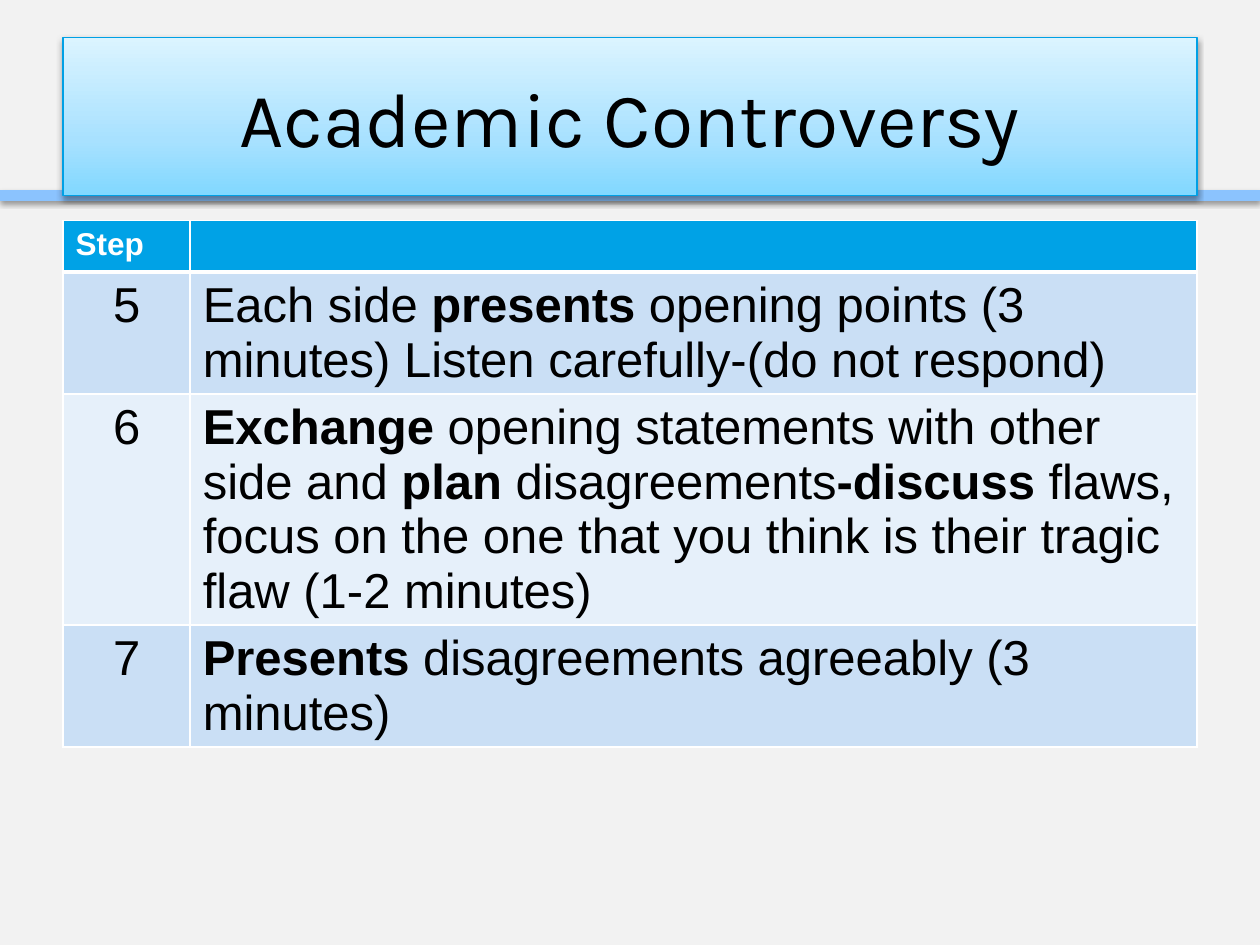
import pptx
import pptx.util
import pptx.dml.color
import pptx.enum.text
import pptx.enum.shapes
import pptx.oxml.ns
import lxml.etree

TITLE = "Academic Controversy"
HEADER = ["Step", ""]
STEPS = [
    ("5", [("Each side ", False), ("presents", True),
           (" opening points (3 minutes) Listen carefully-(do not respond)", False)]),
    ("6", [("Exchange", True), (" opening statements with other side and ", False),
           ("plan ", True), ("disagreements", False), ("-discuss", True),
           (" flaws, focus on the one that you think is their tragic flaw (1-2 minutes)", False)]),
    ("7", [("Presents", True), (" disagreements agreeably (3 minutes)", False)]),
]
COLORS = {
    "background": "F2F2F2", "rule": "8BC3FE", "outline": "00A0E5",
    "header": "00A2E6", "odd": "CADFF5", "even": "E6F0FA",
    "text": "000000", "white": "FFFFFF",
}
GRADIENT = [(0, "81D8FF"), (35, "A8E1FF"), (100, "DBF4FF")]
WIDTH, HEIGHT, MARGIN = 10, 7.5, 0.5
TITLE_TOP, TITLE_HEIGHT = 0.3, 1.25
TABLE_TOP, TABLE_HEIGHT, ROW_HEIGHT = 1.75, 3.97, 0.41
COLUMNS = [1.01, 7.99]

Inches, Pt = pptx.util.Inches, pptx.util.Pt
CENTER = pptx.enum.text.PP_ALIGN.CENTER


def rgb(name):
    return pptx.dml.color.RGBColor.from_string(COLORS[name])


def node(parent, tag, **attrs):
    return lxml.etree.SubElement(parent, pptx.oxml.ns.qn(tag),
                                 {k: str(v) for k, v in attrs.items()})


def add_shadow(shape):
    effects = node(shape.element.spPr, "a:effectLst")
    outer = node(effects, "a:outerShdw", blurRad=Pt(3.1), dist=Pt(1.6),
                 dir=90 * 60000, rotWithShape=0)
    color = node(outer, "a:srgbClr", val=COLORS["text"])
    node(color, "a:alpha", val=38000)


def add_run(p, text, size, color, bold=False, font="Arial"):
    r = p.add_run()
    r.text = text
    r.font.size, r.font.bold, r.font.name = Pt(size), bold, font
    r.font.color.rgb = rgb(color)


def style_cell(cell, fill, bottom=1):
    cell.fill.solid()
    cell.fill.fore_color.rgb = rgb(fill)
    cell.margin_left = cell.margin_right = Inches(0.1)
    cell.margin_top = cell.margin_bottom = Inches(0.05)
    props = cell._tc.get_or_add_tcPr()
    widths = {"a:lnL": 1, "a:lnR": 1, "a:lnT": 1, "a:lnB": bottom}
    for i, (tag, width) in enumerate(widths.items()):
        border = node(props, tag, w=Pt(width))
        node(node(border, "a:solidFill"), "a:srgbClr", val=COLORS["white"])
        props.insert(i, border)


def add_title(s):
    sp = s.shapes.title
    sp.left, sp.top = Inches(MARGIN), Inches(TITLE_TOP)
    sp.width, sp.height = Inches(WIDTH - 2 * MARGIN), Inches(TITLE_HEIGHT)
    sp.fill.gradient()
    sp.fill.gradient_angle = 90
    stops = sp.element.spPr.find(".//" + pptx.oxml.ns.qn("a:gsLst"))
    for stop in list(stops):
        stops.remove(stop)
    for position, color in GRADIENT:
        node(node(stops, "a:gs", pos=position * 1000), "a:srgbClr", val=color)
    sp.line.color.rgb = rgb("outline")
    sp.line.width = Pt(0.75)
    add_shadow(sp)
    tf = sp.text_frame
    tf.word_wrap = True
    tf.vertical_anchor = pptx.enum.text.MSO_ANCHOR.MIDDLE
    p = tf.paragraphs[0]
    p.alignment = CENTER
    add_run(p, TITLE, 44, "text", font="Karla")


def add_rule(s):
    y = Inches(TITLE_TOP + TITLE_HEIGHT)
    line = s.shapes.add_connector(pptx.enum.shapes.MSO_CONNECTOR.STRAIGHT,
                                  0, y, Inches(WIDTH), y)
    line.line.color.rgb = rgb("rule")
    line.line.width = Pt(6)
    add_shadow(line)
    s.shapes.title.element.addprevious(line.element)


def add_steps(s):
    table = s.shapes.add_table(len(STEPS) + 1, len(COLUMNS), Inches(MARGIN), Inches(TABLE_TOP),
                               Inches(sum(COLUMNS)), Inches(TABLE_HEIGHT)).table
    for column, width in zip(table.columns, COLUMNS):
        column.width = Inches(width)
    for row in table.rows:
        row.height = Inches(ROW_HEIGHT)
    for j, text in enumerate(HEADER):
        cell = table.cell(0, j)
        style_cell(cell, "header", bottom=3)
        if text:
            add_run(cell.text_frame.paragraphs[0], text, 18, "white", True)
    for i, (number, runs) in enumerate(STEPS, 1):
        for j, content in enumerate([[(number, False)], runs]):
            cell = table.cell(i, j)
            style_cell(cell, "odd" if i % 2 else "even")
            p = cell.text_frame.paragraphs[0]
            if j == 0:
                p.alignment = CENTER
            for text, bold in content:
                add_run(p, text, 28, "text", bold)


def main():
    prs = pptx.Presentation()
    prs.slide_width, prs.slide_height = Inches(WIDTH), Inches(HEIGHT)
    s = prs.slides.add_slide(prs.slide_layouts[5])
    s.background.fill.solid()
    s.background.fill.fore_color.rgb = rgb("background")
    add_title(s)
    add_rule(s)
    add_steps(s)
    prs.save("out.pptx")


if __name__ == "__main__":
    main()
